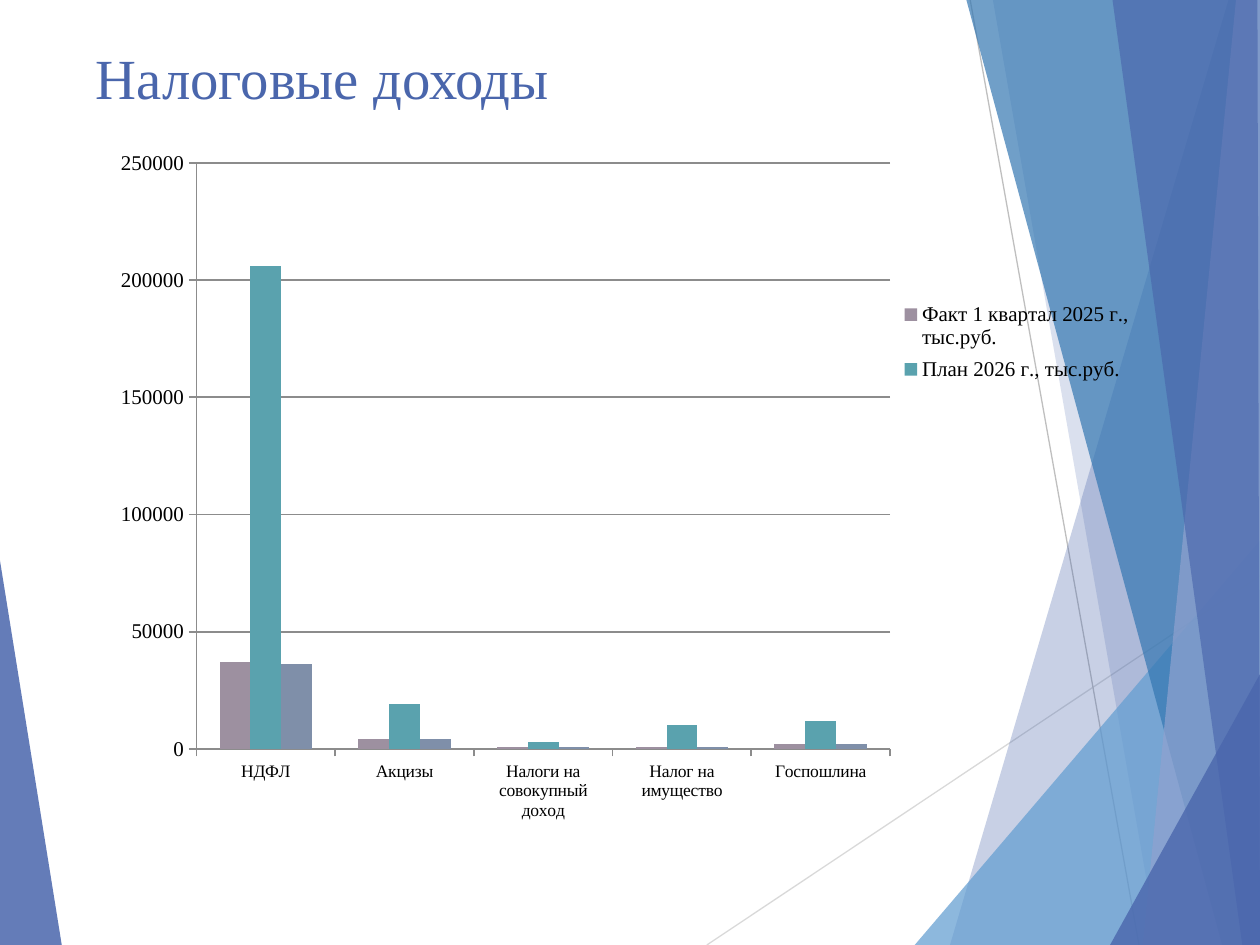
from lxml import etree
from pptx import Presentation
from pptx import util as u
from pptx.chart.data import CategoryChartData
from pptx.dml.color import RGBColor
from pptx.enum import chart as ch, shapes, text
from pptx.oxml import parse_xml
from pptx.oxml.ns import nsdecls, qn

FONT = "Times New Roman"
GREY = "8C8C8C"


def rgb(value):
    return RGBColor.from_string(value)


def set_font(font, size, color):
    for name, value in {"size": u.Pt(size), "name": FONT, "bold": False}.items():
        setattr(font, name, value)
    font.color.rgb = rgb(color)


prs = Presentation()
prs.slide_width, prs.slide_height = u.Inches(10), u.Inches(7.5)
s = prs.slides.add_slide(prs.slide_layouts[5])

# Thin lines behind the facets
for x1, y1, x2, y2, color in [
    (5.61, 7.5, 10, 4.57, "D9D9D9"),
    (7.7, 0, 9.04, 7.5, "BFBFBF"),
]:
    line = s.shapes.add_connector(
        shapes.MSO_CONNECTOR.STRAIGHT, *[u.Inches(v) for v in (x1, y1, x2, y2)])
    line.line.color.rgb = rgb(color)
    line.line.width = u.Pt(0.75)
    etree.SubElement(line._element.spPr, qn("a:effectLst"))

# Translucent facets: colour, opacity in percent, corners
facets = [
    ("4A66AC", 85, [(0, 4.45), (0.49, 7.5), (0, 7.5)]),
    ("4A66AC", 30, [(9.75, 0), (7.54, 7.5), (10, 7.5), (10, 0)]),
    ("4A66AC", 20, [(7.88, 0), (9.19, 7.5), (10, 7.5), (10, 0)]),
    ("629DD1", 72, [(7.26, 7.5), (10, 4.29), (10, 7.5)]),
    ("3477B2", 70, [(7.67, 0), (9.7, 7.5), (10, 7.5), (10, 0)]),
    ("90A2CF", 70, [(9.81, 0), (9.07, 7.5), (10, 7.5), (10, 0)]),
    ("4A66AC", 65, [(8.83, 0), (9.86, 7.5), (10, 7.5), (9.98, 0)]),
    ("4A66AC", 80, [(8.81, 7.5), (10, 5.35), (10, 7.5)]),
]
for color, opacity, corners in facets:
    points = [(u.Inches(x), u.Inches(y)) for x, y in corners]
    fb = s.shapes.build_freeform(*points[0])
    fb.add_line_segments(points[1:], close=True)
    sp = fb.convert_to_shape()
    sp.shadow.inherit = False
    sp.line.fill.background()
    sp.fill.solid()
    sp.fill.fore_color.rgb = rgb(color)
    clr = sp._element.spPr.find(".//" + qn("a:srgbClr"))
    etree.SubElement(clr, qn("a:alpha"), val=str(opacity * 1000))

# Title
title = s.shapes.title
title._element.getparent().append(title._element)
for name, value in {"left": 0.67, "top": 0.29, "width": 6.94, "height": 0.79}.items():
    setattr(title, name, u.Inches(value))
tf = title.text_frame
tf.word_wrap = True
tf.auto_size = text.MSO_AUTO_SIZE.NONE
tf.vertical_anchor = text.MSO_ANCHOR.TOP
tf.margin_left, tf.margin_top = u.Inches(0.09), u.Inches(0.05)
p = tf.paragraphs[0]
p.alignment = text.PP_ALIGN.LEFT
r = p.add_run()
r.text = "Налоговые доходы"
set_font(r.font, 32.4, "4A66AC")

# Chart data; the third series has no label
data = CategoryChartData()
data.categories = ["НДФЛ", "Акцизы", "Налоги на совокупный доход",
                   "Налог на имущество", "Госпошлина"]
series = [
    ("Факт 1 квартал 2025 г., тыс.руб.", "9D90A0", [37000, 4000, 1000, 1000, 2000]),
    ("План 2026 г., тыс.руб.", "5AA2AE", [206000, 19000, 3000, 10000, 12000]),
    ("", "7F8FA9", [36000, 4000, 1000, 1000, 2000]),
]
for name, color, values in series:
    data.add_series(name, values)
chart = s.shapes.add_chart(
    ch.XL_CHART_TYPE.COLUMN_CLUSTERED, u.Inches(0.51), u.Inches(1.1),
    u.Inches(8.74), u.Inches(6.46), data).chart
chart.has_title = False
chart.font.size, chart.font.name = u.Pt(18), "Lato"

# Columns
plot = chart.plots[0]
plot.gap_width, plot.overlap, plot.vary_by_categories = 150, 0, False
for ser, (name, color, values) in zip(plot.series, series):
    ser.format.fill.solid()
    ser.format.fill.fore_color.rgb = rgb(color)

# Axes
val_axis = chart.value_axis
val_axis.minimum_scale, val_axis.maximum_scale, val_axis.major_unit = 0, 250000, 50000
val_axis.has_major_gridlines = True
for axis, size in [(chart.category_axis, 10), (val_axis, 12)]:
    axis.major_tick_mark = ch.XL_TICK_MARK.OUTSIDE
    set_font(axis.tick_labels.font, size, "000000")
for part in (chart.category_axis, val_axis, val_axis.major_gridlines):
    part.format.line.color.rgb = rgb(GREY)
    part.format.line.width = u.Pt(1)

# Legend for the two labelled series
chart.has_legend = True
legend = chart.legend
legend.position = ch.XL_LEGEND_POSITION.RIGHT
legend.include_in_layout = False
set_font(legend.font, 12, "000000")
legend._element.find(qn("c:legendPos")).addnext(parse_xml(
    f'<c:legendEntry {nsdecls("c")}><c:idx val="2"/><c:delete val="1"/></c:legendEntry>'))

# Fixed places of the plot area and the legend, as shares of the chart
plot_area = chart._chartSpace.chart.plotArea
for parent, target, place in [
    (plot_area, '<c:layoutTarget val="inner"/>', (0.12, 0.03, 0.63, 0.72)),
    (legend._element, "", (0.75, 0.19, 0.23, 0.12)),
]:
    for old in parent.findall(qn("c:layout")):
        parent.remove(old)
    modes = "".join(f'<c:{m}Mode val="edge"/>' for m in "xy")
    sizes = "".join(f'<c:{k} val="{v}"/>' for k, v in zip("xywh", place))
    layout = parse_xml(f'<c:layout {nsdecls("c")}><c:manualLayout>{target}{modes}'
                       f'{sizes}</c:manualLayout></c:layout>')
    if parent is plot_area:
        parent.insert(0, layout)
    else:
        parent.find(qn("c:legendEntry")).addnext(layout)

prs.save("out.pptx")
